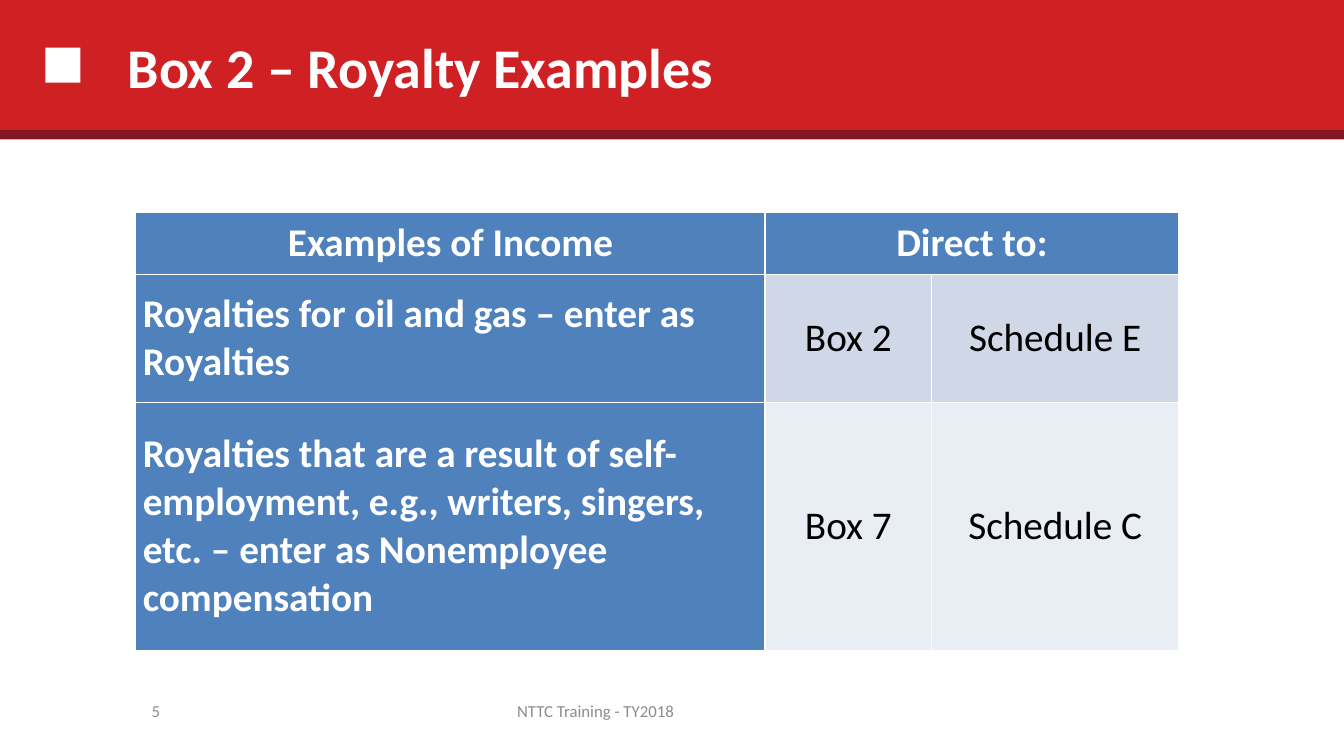
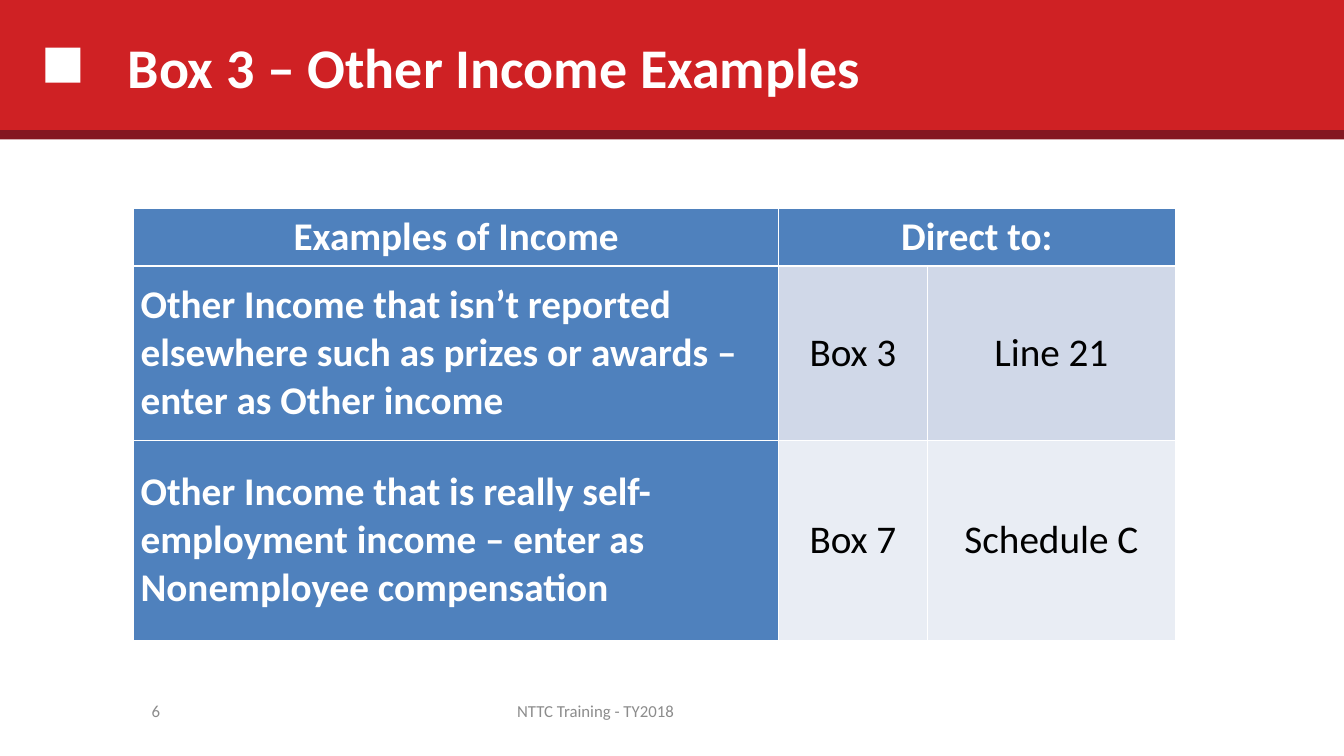
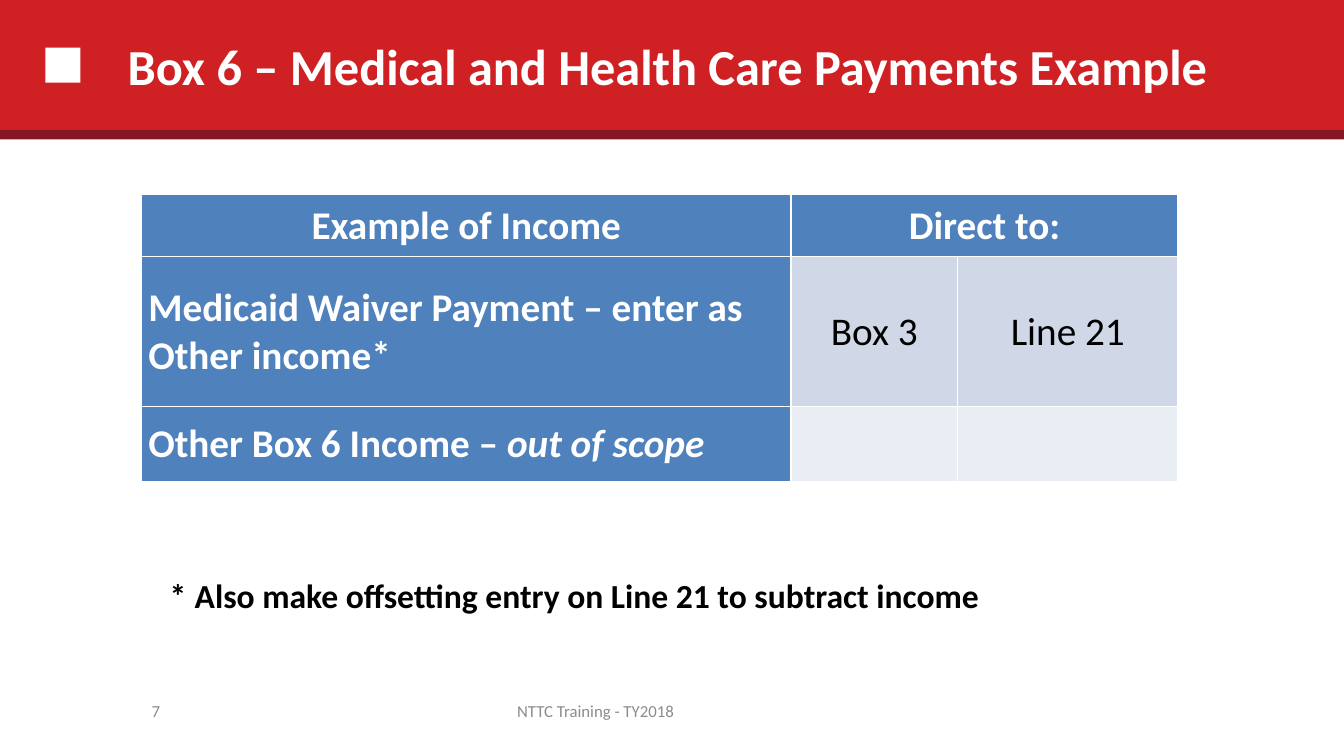
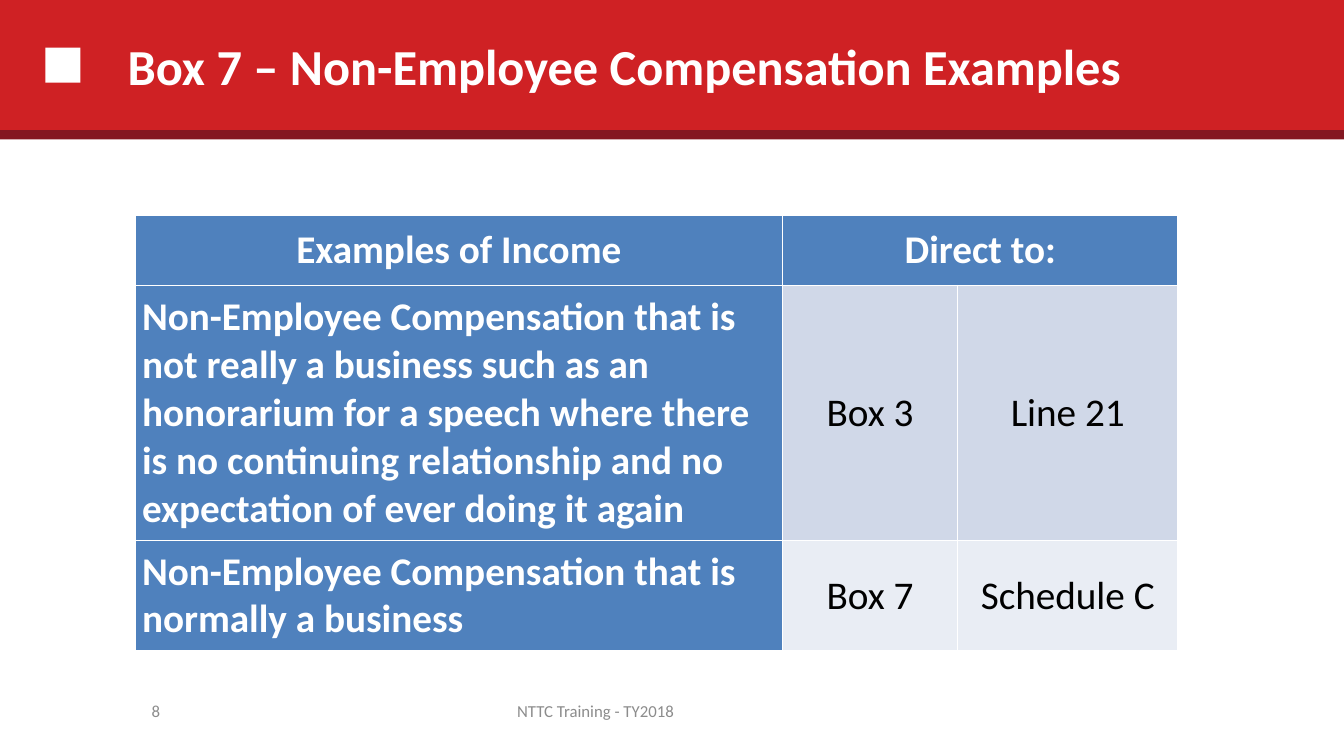
"""Build four slides of tax training tables that direct income to the right form."""
from pptx import Presentation
from pptx.dml.color import RGBColor
from pptx.enum.shapes import MSO_SHAPE
from pptx.enum.text import MSO_ANCHOR, MSO_AUTO_SIZE, PP_ALIGN
from pptx.util import Pt

RED = RGBColor(0xCF, 0x21, 0x24)
DARK_RED = RGBColor(0x84, 0x17, 0x21)
WHITE = RGBColor(0xFF, 0xFF, 0xFF)
BLACK = RGBColor(0x00, 0x00, 0x00)
GRAY = RGBColor(0x8C, 0x8C, 0x8C)
BLUE = RGBColor(0x4F, 0x81, 0xBD)
ROW_FILLS = [BLUE, RGBColor(0xD0, 0xD8, 0xE8), RGBColor(0xE9, 0xED, 0xF4)]
FIRST_NUMBER = 5


def style(paragraph, size, color, bold=False, align=PP_ALIGN.LEFT):
    paragraph.alignment = align
    paragraph.font.name = "Calibri"
    paragraph.font.size = Pt(size)
    paragraph.font.bold = bold
    paragraph.font.color.rgb = color


def add_text(slide, text, left, top, width, height):
    frame = slide.shapes.add_textbox(Pt(left), Pt(top), Pt(width), Pt(height)).text_frame
    frame.word_wrap = True
    frame.text = text
    return frame


pages = [
    {
        "title": "Box 2 – Royalty Examples", "title_size": 40, "title_width": 767.5,
        "at": (97, 151.5), "columns": (449.5, 119, 176.5), "heights": (44.5, 91.5, 177),
        "rows": [
            ("Examples of Income", "Direct to:", ""),
            ("Royalties for oil and gas – enter as Royalties", "Box 2", "Schedule E"),
            ("Royalties that are a result of self-employment, e.g., writers, singers, etc. "
             "– enter as Nonemployee compensation", "Box 7", "Schedule C"),
        ],
    },
    {
        "title": "Box 3 – Other Income Examples", "title_size": 40, "title_width": 767.5,
        "at": (95.5, 148.5), "columns": (460.5, 106.5, 177), "heights": (41.5, 124.5, 143),
        "rows": [
            ("Examples of Income", "Direct to:", ""),
            ("Other Income that isn’t reported elsewhere such as prizes or awards "
             "– enter as Other income", "Box 3", "Line 21"),
            ("Other Income that is really self-employment income "
             "– enter as Nonemployee compensation", "Box 7", "Schedule C"),
        ],
    },
    {
        "title": "Box 6 – Medical and Health Care Payments Example",
        "title_size": 36, "title_width": 797,
        "at": (101, 139), "columns": (464, 119, 157.5), "heights": (44.5, 107, 53.5),
        "rows": [
            ("Example of Income", "Direct to:", ""),
            ("Medicaid Waiver Payment – enter as Other income*", "Box 3", "Line 21"),
            ("Other Box 6 Income – ", "", ""),
        ],
    },
    {
        "title": "Box 7 – Non-Employee Compensation Examples",
        "title_size": 36, "title_width": 767.5,
        "at": (96.5, 154), "columns": (462.5, 125, 157.5), "heights": (50, 182, 79),
        "rows": [
            ("Examples of Income", "Direct to:", ""),
            ("Non-Employee Compensation that is not really a business such as an honorarium "
             "for a speech where there is no continuing relationship and no expectation of "
             "ever doing it again", "Box 3", "Line 21"),
            ("Non-Employee Compensation that is normally a business", "Box 7", "Schedule C"),
        ],
    },
]

prs = Presentation()
prs.slide_width, prs.slide_height = Pt(960), Pt(540)
layout = prs.slide_layouts[5]
slides = [prs.slides.add_slide(layout) for _ in pages]

header_parts = [
    (0, -0.5, 960, 95.5, RED),
    (32.5, 34, 25, 25, WHITE),
    (0, 93, 960, 6.5, DARK_RED),
]
for position, (left, top, width, height, color) in enumerate(header_parts, 2):
    part = slides[0].shapes.add_shape(
        MSO_SHAPE.RECTANGLE, Pt(left), Pt(top), Pt(width), Pt(height))
    part.shadow.inherit = False
    part.fill.solid()
    part.fill.fore_color.rgb = color
    part.line.fill.background()
    layout.shapes.element.insert(position, part.element)

tables = []
for number, (slide, page) in enumerate(zip(slides, pages), FIRST_NUMBER):
    title = slide.shapes.title
    title.left, title.top = Pt(84), Pt(2)
    title.width, title.height = Pt(page["title_width"]), Pt(90)
    title.text_frame.text = page["title"]
    title.text_frame.auto_size = MSO_AUTO_SIZE.NONE
    title.text_frame.vertical_anchor = MSO_ANCHOR.MIDDLE
    style(title.text_frame.paragraphs[0], page["title_size"], WHITE, True)

    for text, left, width, align in [
        ("NTTC Training - TY2018", 273.5, 304, PP_ALIGN.CENTER),
        (str(number), 48, 73.5, PP_ALIGN.RIGHT),
    ]:
        footer = add_text(slide, text, left, 493.5, width, 28.5)
        footer.vertical_anchor = MSO_ANCHOR.MIDDLE
        style(footer.paragraphs[0], 12, GRAY, align=align)

    left, top = page["at"]
    table = slide.shapes.add_table(
        3, 3, Pt(left), Pt(top), Pt(sum(page["columns"])), Pt(sum(page["heights"]))).table
    table.first_col = True
    for column, width in zip(table.columns, page["columns"]):
        column.width = Pt(width)
    for r, (texts, height, fill) in enumerate(zip(page["rows"], page["heights"], ROW_FILLS)):
        table.rows[r].height = Pt(height)
        for c, text in enumerate(texts):
            cell = table.cell(r, c)
            heading = r == 0 or c == 0
            cell.fill.solid()
            cell.fill.fore_color.rgb = BLUE if heading else fill
            cell.vertical_anchor = MSO_ANCHOR.MIDDLE
            cell.margin_left = cell.margin_right = Pt(5)
            cell.margin_top = cell.margin_bottom = Pt(0)
            cell.text = text
            style(cell.text_frame.paragraphs[0], 28, WHITE if heading else BLACK, heading,
                  PP_ALIGN.LEFT if r and c == 0 else PP_ALIGN.CENTER)
    table.cell(0, 1).merge(table.cell(0, 2))
    tables.append(table)

out_of_scope = tables[2].cell(2, 0).text_frame.paragraphs[0].add_run()
out_of_scope.text = "out of scope"
out_of_scope.font.italic = True

footnote = add_text(slides[2], "*\tAlso make offsetting entry on Line 21 to subtract income",
                    114, 407, 688, 36).paragraphs[0]
indents = footnote._p.get_or_add_pPr()
indents.set("marL", str(Pt(18)))
indents.set("indent", str(Pt(-18)))
style(footnote, 24, BLACK, True)

prs.save("out.pptx")
